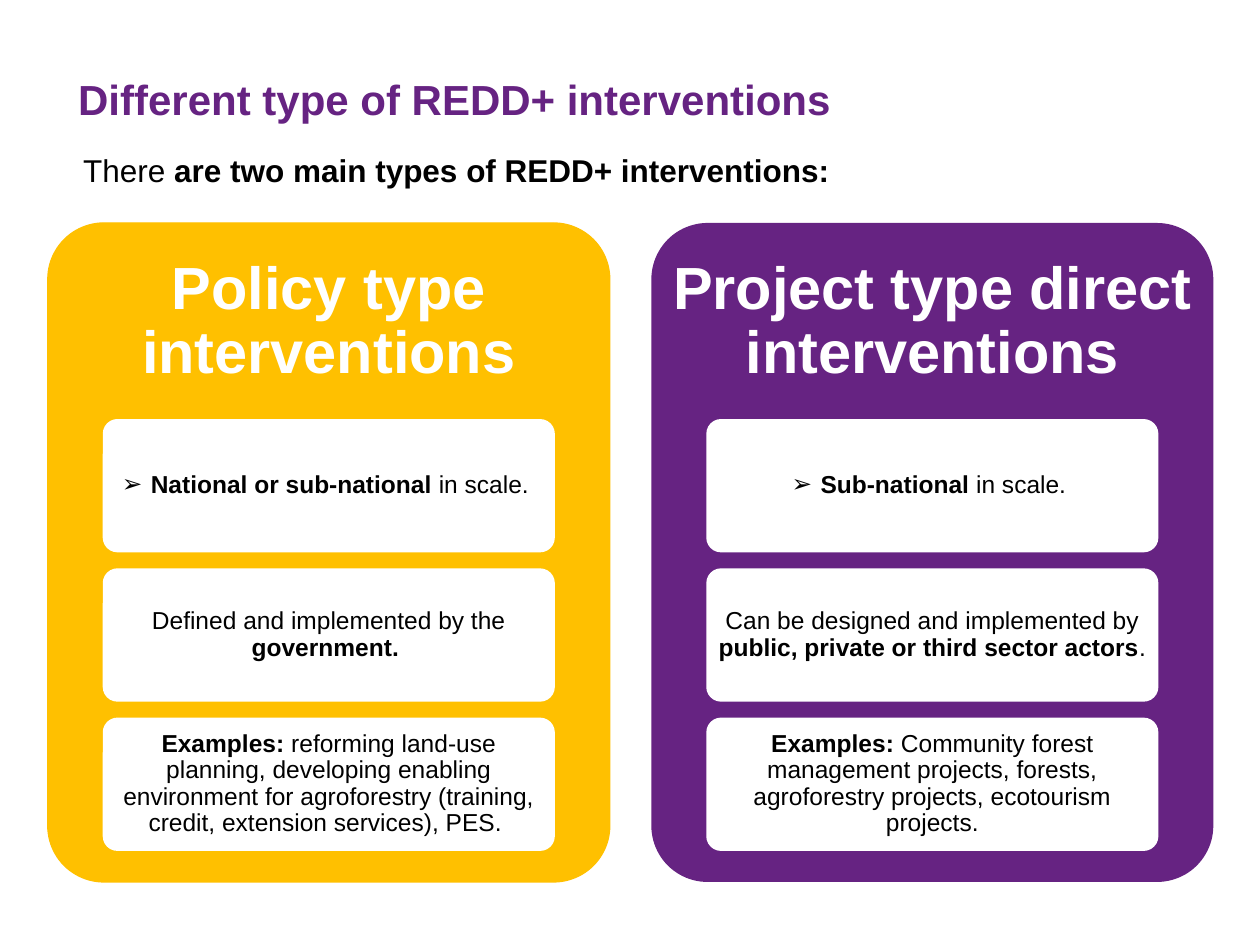
from lxml import etree
from pptx import Presentation
from pptx.dml.color import RGBColor
from pptx.enum.shapes import MSO_SHAPE
from pptx.enum.text import MSO_ANCHOR, MSO_AUTO_SIZE, PP_ALIGN
from pptx.oxml.ns import qn
from pptx.util import Inches, Pt

ROUNDED = MSO_SHAPE.ROUNDED_RECTANGLE
MIDDLE = MSO_ANCHOR.MIDDLE
FIXED = MSO_AUTO_SIZE.NONE
LEFT, CENTER = PP_ALIGN.LEFT, PP_ALIGN.CENTER

COLUMNS, ROWS = 100, 75
PURPLE, GOLD, WHITE, BLACK = "662382", "FFC000", "FFFFFF", "000000"

# Each card is a list of (text, bold) spans; the first card of a panel has a bullet
PANELS = [
    (3.8, GOLD, GOLD, "Policy type interventions", [
        [("National or sub-national", True), (" in scale. ", False)],
        [("Defined and implemented by the ", False), ("government. ", True)],
        [("Examples: ", True),
         ("reforming land-use planning, developing enabling environment for "
          "agroforestry (training, credit, extension services), PES. ", False)],
    ]),
    (51.7, PURPLE, None, "Project type direct interventions", [
        [("Sub-national", True), (" in scale. ", False)],
        [("Can be designed and implemented by ", False),
         ("public, private or third sector actors", True), (". ", False)],
        [("Examples: ", True),
         ("Community forest management projects, forests, agroforestry "
          "projects, ecotourism projects.", False)],
    ]),
]


def color(value):
    return RGBColor.from_string(value)


def set_bullet(para, mark=None, indent=0):
    properties = para._p.get_or_add_pPr()
    properties.set("marL", str(Inches(indent)))
    properties.set("indent", str(-Inches(indent)))
    if mark:
        etree.SubElement(properties, qn("a:buFont")).set("typeface", "Arial")
        etree.SubElement(properties, qn("a:buChar")).set("char", mark)
    else:
        etree.SubElement(properties, qn("a:buNone"))


def write(box, spans, size, ink=BLACK, align=CENTER, spacing=0.9,
          insets=(0.1, 0.05, 0.1, 0.05), bullet=None):
    frame = box.text_frame
    frame.word_wrap = True
    frame.auto_size = FIXED
    frame.vertical_anchor = MIDDLE
    (frame.margin_left, frame.margin_top,
     frame.margin_right, frame.margin_bottom) = map(Inches, insets)
    para = frame.paragraphs[0]
    para.alignment = align
    para.line_spacing = spacing
    para.space_before = Pt(0)
    set_bullet(para, bullet, 0.23 if bullet else 0)
    for text, bold in spans:
        span = para.add_run()
        span.text = text
        span.font.name = "Arial"
        span.font.size = Pt(size)
        span.font.bold = bold
        span.font.color.rgb = color(ink)


class SlideBuilder:
    """Holds the deck, the current slide and its grid."""

    def __init__(self):
        self.deck = Presentation()
        self.deck.slide_width, self.deck.slide_height = Inches(10), Inches(7.5)
        self.slide = self.deck.slides.add_slide(self.deck.slide_layouts[1])

    def area(self, column, row, columns, rows):
        unit_x = self.deck.slide_width / COLUMNS
        unit_y = self.deck.slide_height / ROWS
        return [round(length) for length in
                (column * unit_x, row * unit_y, columns * unit_x, rows * unit_y)]

    def placeholder(self, index, area, spans, size, **style):
        box = self.slide.placeholders[index]
        box.left, box.top, box.width, box.height = self.area(*area)
        write(box, spans, size, align=LEFT, spacing=1.0, **style)

    def rounded(self, area, fill, outline=None, width=0.75):
        box = self.slide.shapes.add_shape(ROUNDED, *self.area(*area))
        box.adjustments[0] = 0.1
        box.shadow.inherit = False
        box.fill.solid()
        box.fill.fore_color.rgb = color(fill)
        if outline:
            box.line.color.rgb = color(outline)
            box.line.width = Pt(width)
        else:
            box.line.fill.background()
        return box

    def heading(self, area, text):
        box = self.slide.shapes.add_textbox(*self.area(*area))
        write(box, [(text, True)], 34, ink=WHITE, insets=(0.14,) * 4)

    def card(self, area, spans, bullet):
        box = self.rounded(area, WHITE, WHITE, 2)
        write(box, spans, 14, insets=(0.04, 0.03, 0.04, 0.03), bullet=bullet)

    def panel(self, left, fill, outline, title, cards):
        self.rounded((left, 17.7, 44.6, 52.3), fill, outline)
        self.heading((left, 17.7, 44.6, 15.7), title)
        for number, spans in enumerate(cards):
            area = (left + 4.5, 33.4 + 11.85 * number, 35.6, 10.3)
            self.card(area, spans, None if number else "➢")


def main():
    builder = SlideBuilder()

    # Title and lead sentence
    builder.placeholder(0, (5.2, 5.3, 86.9, 5),
                        [("Different type of REDD+ interventions", True)], 24,
                        ink=PURPLE)
    builder.placeholder(1, (5.6, 7.9, 83.8, 9.8),
                        [("There ", False),
                         ("are two main types of REDD+ interventions:", True)], 18,
                        insets=(0.1, 0.19, 0.1, 0.05))

    # The two panels
    for panel in PANELS:
        builder.panel(*panel)

    builder.deck.save("out.pptx")


if __name__ == "__main__":
    main()
